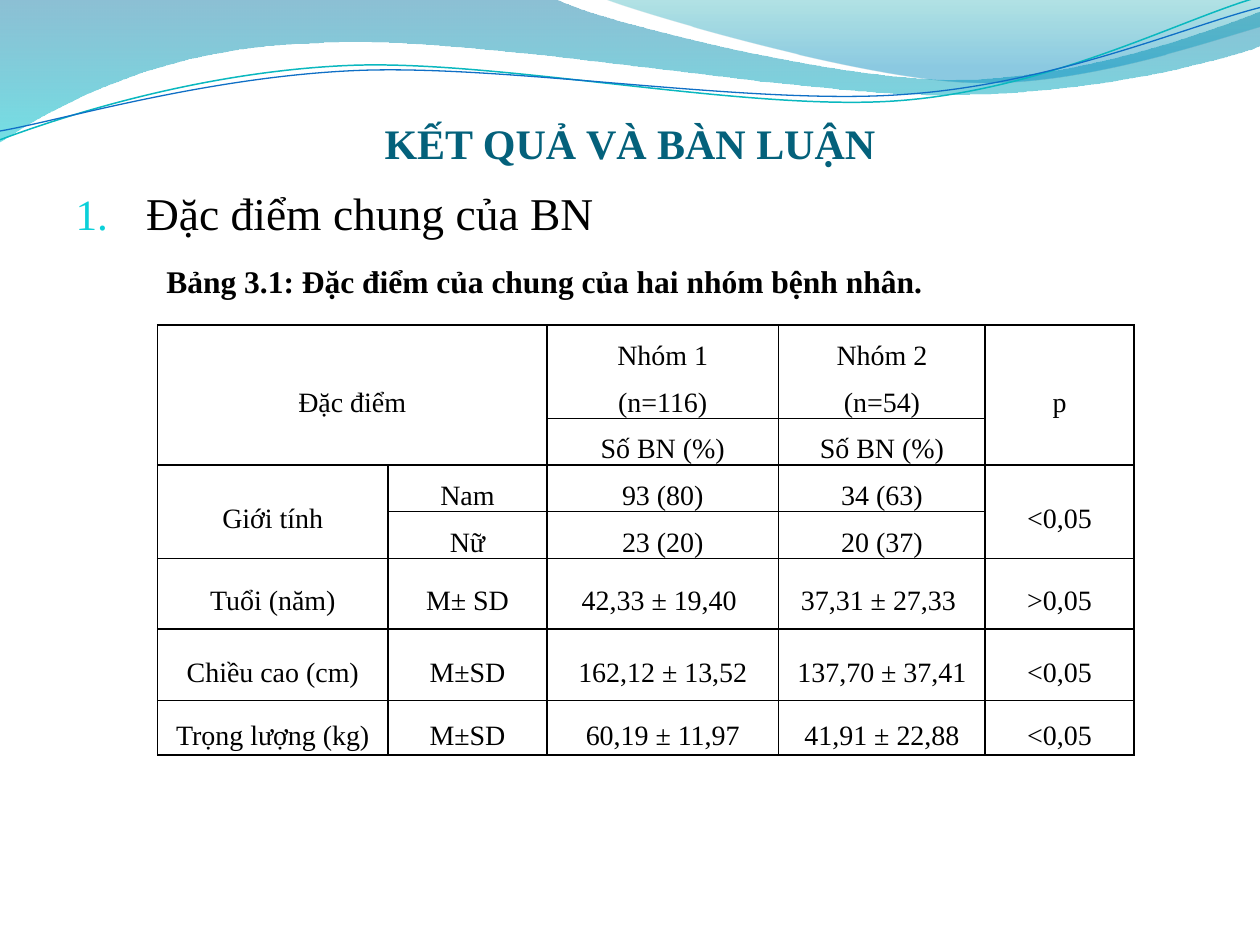
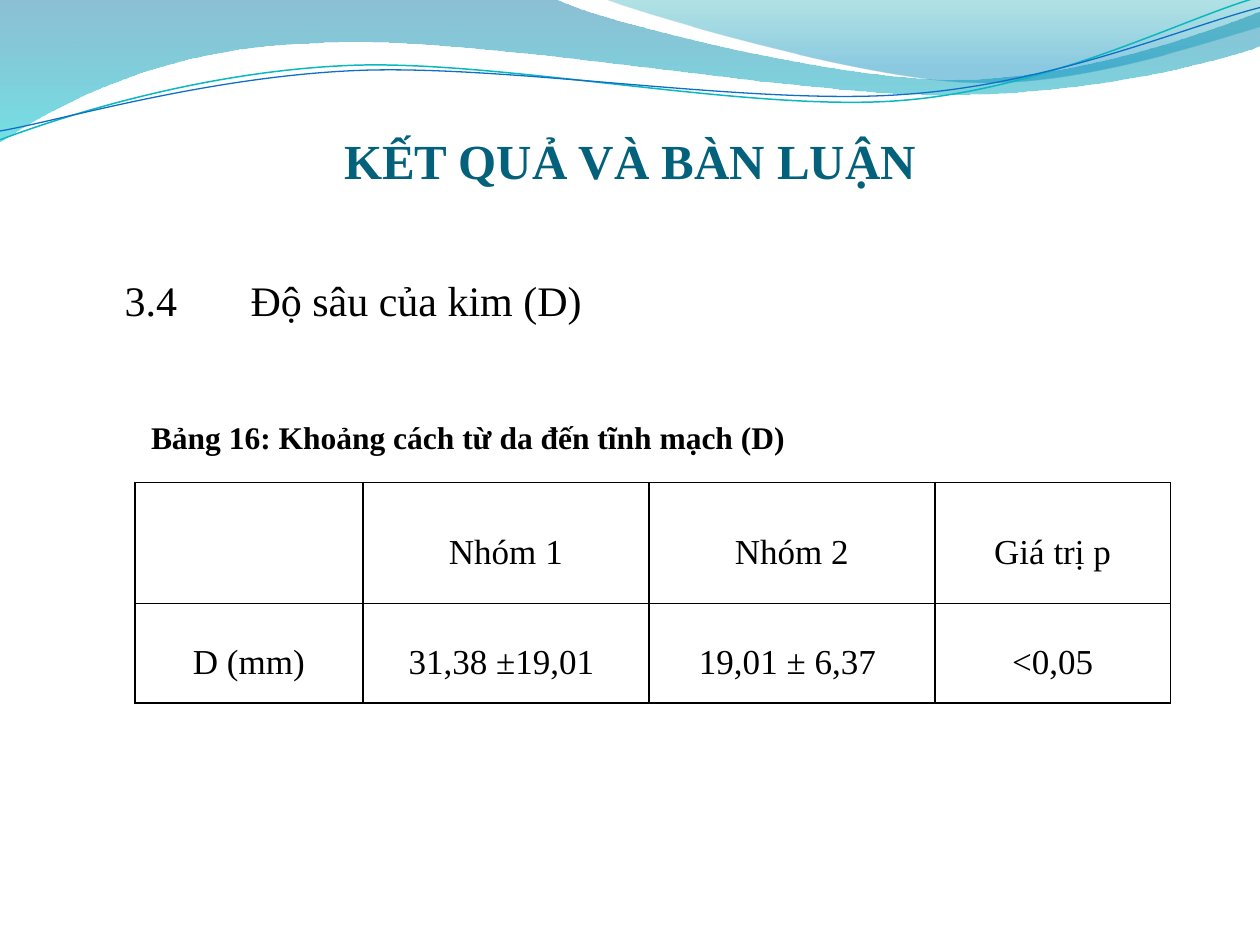
from dataclasses import dataclass

from lxml.etree import SubElement
from pptx import Presentation
from pptx.dml.color import RGBColor as RGB
from pptx.enum.text import MSO_ANCHOR as ANCHOR, MSO_AUTO_SIZE as AUTO, PP_ALIGN as ALIGN
from pptx.oxml.ns import qn
from pptx.util import Inches, Pt


@dataclass(frozen=True)
class Theme:
    font: str = "Times New Roman"
    ink: str = "000000"
    title: str = "04617B"
    number: str = "0BD0D9"
    wide_wave: tuple = ((0, "0074A1", 45), (1, "00C6CF", 55))
    corner_wave: tuple = ((0, "00A1A9", 30), (0.8, "008BBF", 45))
    teal_line: tuple = ("0AB8BF", 0.85)
    blue_line: tuple = ("0F6FC6", 0.75)
    border: float = 1
    list_size: int = 26
    section_size: int = 24
    caption_size: int = 18


HEADING = "KẾT QUẢ VÀ BÀN LUẬN"

WIDE_WAVE = [
    (0, 0), (4.4, -0.01),
    (4.76, 0.17, 6.64, 0.63, 7.58, 0.63), (8.53, 0.63, 9.58, 0.26, 10, 0.09),
    (10.01, 0.36),
    (9.83, 0.44, 8.7, 0.76, 7.46, 0.75), (6.22, 0.75, 3.82, 0.28, 2.57, 0.34),
    (1.29, 0.36, 0.46, 0.83, -0.01, 1.13), (0, 0),
]
CORNER_WAVE = [
    (4.79, -0.01),
    (5.09, 0.11, 6.82, 0.62, 7.69, 0.65), (8.56, 0.69, 9.61, 0.32, 10, 0.21),
    (10, 0), (4.79, -0.01),
]
TEAL_LINE = [
    (0, 1.11),
    (0.48, 0.93, 1.58, 0.57, 2.77, 0.52), (3.95, 0.47, 5.93, 0.89, 7.13, 0.8),
    (8.33, 0.71, 9.38, 0.15, 9.98, -0.02),
]
BLUE_LINE = [
    (0, 1.04),
    (0.47, 0.96, 1.64, 0.61, 2.83, 0.56), (4.03, 0.51, 5.97, 0.84, 7.17, 0.75),
    (8.36, 0.67, 9.41, 0.21, 10, 0.06),
]


class Deck:
    def __init__(self, theme):
        self.theme = theme
        self.prs = Presentation()
        self.prs.slide_width, self.prs.slide_height = Inches(10), Inches(7.5)
        self.s = None

    def add_slide(self, layout):
        self.s = self.prs.slides.add_slide(self.prs.slide_layouts[layout])

    def style(self, p, size, color=None, bold=False, align=None, spacing=None):
        p.font.name, p.font.size, p.font.bold = self.theme.font, Pt(size), bold
        p.font.color.rgb = RGB.from_string(color or self.theme.ink)
        if align is not None:
            p.alignment = align
        if spacing is not None:
            p.line_spacing = spacing

    def paragraph_part(self, p, tag, **attributes):
        pPr = p._p.get_or_add_pPr()
        node = pPr.makeelement(qn(f"a:{tag}"), attributes)
        pPr.find(qn("a:defRPr")).addprevious(node)
        return node

    def indent(self, p, left, hanging=0):
        pPr = p._p.get_or_add_pPr()
        pPr.set("marL", str(Inches(left)))
        pPr.set("indent", str(-Inches(hanging)))

    def place(self, shape, left, top, width, height):
        shape.left, shape.top = Inches(left), Inches(top)
        shape.width, shape.height = Inches(width), Inches(height)

    def outline(self, segments, close):
        ends = [(Inches(seg[-2]), Inches(seg[-1])) for seg in segments]
        builder = self.s.shapes.build_freeform(*ends[0], scale=1.0)
        builder.add_line_segments(ends[1:], close=close)
        sp = builder.convert_to_shape()
        sp.shadow.inherit = False
        lines = list(sp._element.spPr.iter(qn("a:lnTo")))
        for line, segment in zip(lines, segments[1:]):
            if len(segment) == 2:
                continue
            line.tag = qn("a:cubicBezTo")
            for i in (2, 0):
                x, y = Inches(segment[i]) - sp.left, Inches(segment[i + 1]) - sp.top
                line.insert(0, line.makeelement(qn("a:pt"), {"x": str(x), "y": str(y)}))
        return sp

    def wave(self, segments, stops):
        sp = self.outline(segments, True)
        sp.line.fill.background()
        sp.fill.gradient()
        sp.fill.gradient_angle = 270
        for stop, (position, color, _) in zip(sp.fill.gradient_stops, stops):
            stop.position = position
            stop.color.rgb = RGB.from_string(color)
        colors = sp._element.spPr.iter(qn("a:srgbClr"))
        for node, (_, _, opacity) in zip(colors, stops):
            SubElement(node, qn("a:alpha")).set("val", str(opacity * 1000))
        return sp

    def curve(self, segments, pen):
        color, width = pen
        sp = self.outline(segments, False)
        sp.fill.background()
        sp.line.color.rgb = RGB.from_string(color)
        sp.line.width = Pt(width)
        return sp

    def master_band(self):
        t = self.theme
        band = [self.wave(WIDE_WAVE, t.wide_wave), self.wave(CORNER_WAVE, t.corner_wave),
                self.curve(TEAL_LINE, t.teal_line), self.curve(BLUE_LINE, t.blue_line)]
        tree = self.prs.slide_master.shapes._spTree
        for i, sp in enumerate(band):
            sp._element.nvSpPr.cNvPr.set("id", str(101 + i))
            tree.insert(2 + i, sp._element)

    def title(self, text, top, height, size):
        sp = self.s.shapes.title
        self.place(sp, 0.5, top, 9, height)
        tf = sp.text_frame
        tf.text = text
        tf.auto_size = AUTO.NONE
        tf.vertical_anchor = ANCHOR.BOTTOM
        tf.margin_left = tf.margin_right = tf.margin_bottom = 0
        tf.margin_top = Inches(0.05)
        self.style(tf.paragraphs[0], size, self.theme.title, True, ALIGN.CENTER)

    def numbered_body(self, item, caption):
        t = self.theme
        sp = self.s.placeholders[1]
        self.place(sp, 0.5, 1.42, 9, 5.5)
        tf = sp.text_frame
        tf.text = f"{item}\n{caption}"
        tf.auto_size = AUTO.NONE
        first, second = tf.paragraphs
        self.style(first, t.list_size)
        self.style(second, t.caption_size, bold=True)
        first.space_before, second.space_before = Pt(5), Pt(12.5)
        self.indent(first, 0.56, 0.56)
        self.indent(second, 0.72)
        color = self.paragraph_part(first, "buClr")
        SubElement(color, qn("a:srgbClr")).set("val", t.number)
        self.paragraph_part(first, "buSzPct", val="95000")
        self.paragraph_part(first, "buFont", typeface=t.font)
        self.paragraph_part(first, "buAutoNum", type="arabicPeriod")
        self.paragraph_part(second, "buNone")

    def label(self, text, left, top, width, height, size, tab=None, **look):
        box = self.s.shapes.add_textbox(*map(Inches, (left, top, width, height)))
        tf = box.text_frame
        tf.text = text
        tf.word_wrap = False
        tf.auto_size = AUTO.SHAPE_TO_FIT_TEXT
        p = tf.paragraphs[0]
        self.style(p, size, **look)
        if tab is not None:
            stops = self.paragraph_part(p, "tabLst")
            SubElement(stops, qn("a:tab"), pos=str(Inches(tab)), algn="l")

    def cell_borders(self, cell):
        tcPr = cell._tc.get_or_add_tcPr()
        for i, side in enumerate(("lnL", "lnR", "lnT", "lnB")):
            ln = tcPr.makeelement(qn(f"a:{side}"), {"w": str(Pt(self.theme.border))})
            fill = SubElement(ln, qn("a:solidFill"))
            SubElement(fill, qn("a:srgbClr")).set("val", self.theme.ink)
            tcPr.insert(i, ln)

    def table(self, left, top, widths, heights, rows, size, merges=()):
        frame = self.s.shapes.add_table(
            len(rows), len(widths), Inches(left), Inches(top),
            Inches(sum(widths)), Inches(sum(heights)))
        table = frame.table
        table.first_row = table.horz_banding = False
        for column, width in zip(table.columns, widths):
            column.width = Inches(width)
        for row, height in zip(table.rows, heights):
            row.height = Inches(height)
        for r, values in enumerate(rows):
            for c, value in enumerate(values):
                cell = table.cell(r, c)
                cell.text = value
                cell.fill.background()
                cell.vertical_anchor = ANCHOR.MIDDLE
                cell.margin_left = cell.margin_right = Inches(0.07)
                cell.margin_top = cell.margin_bottom = 0
                for p in cell.text_frame.paragraphs:
                    self.style(p, size, align=ALIGN.CENTER, spacing=1.5)
                self.cell_borders(cell)
        for start, end in merges:
            table.cell(*start).merge(table.cell(*end))


def patient_slide(deck):
    deck.add_slide(1)
    deck.master_band()
    deck.title(HEADING, 0.77, 0.56, 24)
    deck.numbered_body("Đặc điểm chung của BN",
                       "Bảng 3.1: Đặc điểm của chung của hai nhóm bệnh nhân.")
    rows = [
        ("Đặc điểm", "", "Nhóm 1\n(n=116)", "Nhóm 2\n(n=54)", "p"),
        ("", "", "Số BN (%)", "Số BN (%)", ""),
        ("Giới tính", "Nam", "93 (80)", "34 (63)", "<0,05"),
        ("", "Nữ", "23 (20)", "20 (37)", ""),
        ("Tuổi (năm)", "M± SD", "42,33 ± 19,40 ", "37,31 ± 27,33 ", ">0,05"),
        ("Chiều cao (cm)", "M±SD", "162,12 ± 13,52", "137,70 ± 37,41", "<0,05"),
        ("Trọng lượng (kg)", "M±SD", "60,19 ± 11,97", "41,91 ± 22,88", "<0,05"),
    ]
    merges = [((0, 0), (1, 1)), ((0, 4), (1, 4)), ((2, 0), (3, 0)), ((2, 4), (3, 4))]
    deck.table(1.25, 2.58, (1.83, 1.26, 1.84, 1.64, 1.18),
               (0.56, 0.27, 0.27, 0.3, 0.56, 0.57, 0.43), rows, 16, merges)


def depth_slide(deck):
    deck.add_slide(5)
    deck.title(HEADING, 0.92, 0.58, 28)
    deck.label("3.4\tĐộ sâu của kim (D)", 0.89, 1.93, 3.87, 0.63,
               deck.theme.section_size, tab=1, spacing=1.5)
    deck.label("Bảng 16: Khoảng cách từ da đến tĩnh mạch (D)", 1.1, 3.27, 5.28, 0.4,
               deck.theme.caption_size, bold=True)
    rows = [
        ("", "Nhóm 1", "Nhóm 2", "Giá trị p"),
        ("D (mm)", "31,38 ±19,01 ", "19,01 ± 6,37 ", "<0,05"),
    ]
    deck.table(1.07, 3.83, (1.81, 2.27, 2.27, 1.87), (0.96, 0.79), rows, 20)


def main():
    deck = Deck(Theme())
    patient_slide(deck)
    depth_slide(deck)
    deck.prs.save("out.pptx")


if __name__ == "__main__":
    main()
